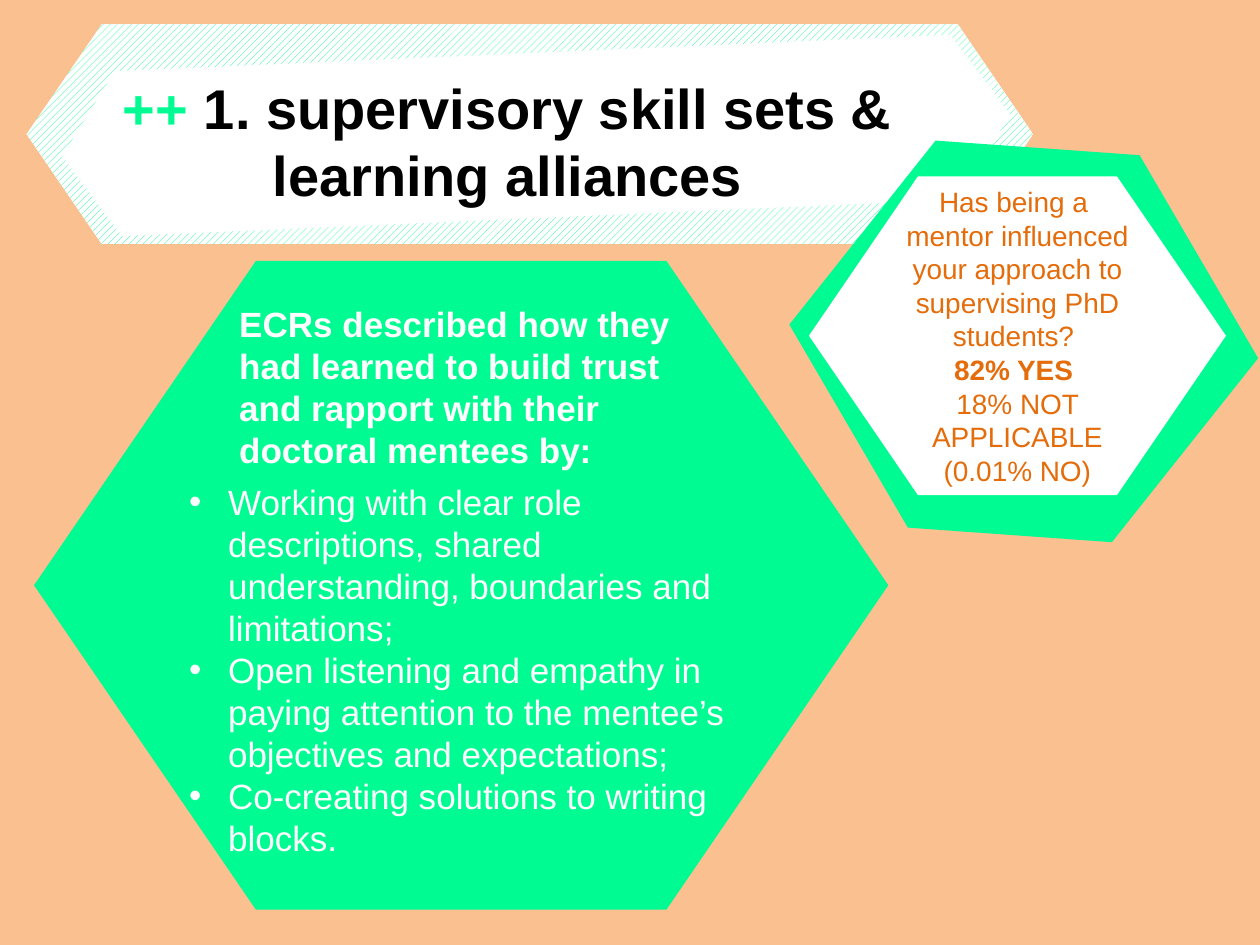
from dataclasses import dataclass

from pptx import Presentation
from pptx.dml.color import RGBColor
from pptx.enum.dml import MSO_PATTERN
from pptx.enum.shapes import MSO_SHAPE
from pptx.enum.text import MSO_ANCHOR, MSO_AUTO_SIZE, PP_ALIGN
from pptx.shapes.autoshape import Shape
from pptx.slide import Slide
from pptx.text.text import TextFrame
from pptx.util import Inches, Pt

CELL = Inches(0.1)  # the slide is a grid of 100 columns by 75 rows
COLUMNS, ROWS = 100, 75


@dataclass(frozen=True)
class Theme:
    font: str = "Arial"
    background: RGBColor = RGBColor(0xFA, 0xC0, 0x90)
    green: RGBColor = RGBColor(0x00, 0xFB, 0x92)
    white: RGBColor = RGBColor(0xFF, 0xFF, 0xFF)
    black: RGBColor = RGBColor(0x00, 0x00, 0x00)
    orange: RGBColor = RGBColor(0xE4, 0x6C, 0x0A)
    title_size: int = 32
    body_size: int = 20
    survey_size: int = 16


THEME = Theme()


@dataclass(frozen=True)
class Box:
    """A place on the grid, in columns and rows."""
    column: float
    row: float
    columns: float
    rows: float

    def lengths(self) -> tuple[int, int, int, int]:
        cells = (self.column, self.row, self.columns, self.rows)
        return tuple(round(cell * CELL) for cell in cells)


@dataclass(frozen=True)
class Hexagon:
    box: Box
    color: RGBColor
    rotation: float = 0
    hatched: bool = False


BANNER = Hexagon(Box(2.1, 1.9, 79.9, 17.5), THEME.green, hatched=True)
BANNER_CENTRE = Hexagon(Box(4.9, 4.2, 75.3, 13.1), THEME.white, 357.5)
MAIN_PANEL = Hexagon(Box(2.7, 20.7, 67.8, 51.5), THEME.green)
SURVEY_FRAME = Hexagon(Box(62.6, 11.7, 37.3, 30.8), THEME.green, 4.1)
SURVEY_PANEL = Hexagon(Box(64.2, 14, 33.1, 25.3), THEME.white)

TITLE_BOX = Box(4.7, 5.3, 71.2, 11.8)
INTRO_BOX = Box(18, 23.5, 38.9, 14.5)
LIST_BOX = Box(14, 37.6, 48.3, 31.3)

TITLE = ("++", " 1. supervisory skill sets & learning alliances")
INTRO = ("ECRs described how they had learned to build trust and rapport "
         "with their doctoral mentees by:")
PRACTICES = (
    "Working with clear role descriptions, shared understanding, "
    "boundaries and limitations;",
    "Open listening and empathy in paying attention to the mentee’s "
    "objectives and expectations;",
    "Co-creating solutions to writing blocks.",
)
SURVEY = (
    "Has being a ",
    "mentor influenced your approach to supervising PhD students? ",
    "82% YES ",
    "18% NOT APPLICABLE (0.01% NO)",
)
SURVEY_HIGHLIGHT = 2


def draw_hexagon(slide: Slide, hexagon: Hexagon) -> Shape:
    shape = slide.shapes.add_shape(MSO_SHAPE.HEXAGON, *hexagon.box.lengths())
    shape.adjustments[0] = 0.342
    shape.rotation = hexagon.rotation
    shape.shadow.inherit = False
    shape.line.fill.background()
    if hexagon.hatched:
        shape.fill.patterned()
        shape.fill.pattern = MSO_PATTERN.WIDE_UPWARD_DIAGONAL
        shape.fill.fore_color.rgb = hexagon.color
        shape.fill.back_color.rgb = THEME.white
    else:
        shape.fill.solid()
        shape.fill.fore_color.rgb = hexagon.color
    return shape


def place_text(shape: Shape, box: Box) -> TextFrame:
    """Move a text shape to its box, in front of everything drawn so far."""
    shape.left, shape.top, shape.width, shape.height = box.lengths()
    tree = shape.element.getparent()
    tree.append(shape.element)
    frame = shape.text_frame
    frame.word_wrap = True
    frame.auto_size = MSO_AUTO_SIZE.NONE
    frame.vertical_anchor = MSO_ANCHOR.TOP
    return frame


def format_text(frame: TextFrame, size: int, color: RGBColor,
                alignment: PP_ALIGN, bold: bool = False) -> None:
    for paragraph in frame.paragraphs:
        paragraph.alignment = alignment
        paragraph.space_before = Pt(0)
        for run in paragraph.runs:
            run.font.name = THEME.font
            run.font.size = Pt(size)
            run.font.bold = bold
            run.font.color.rgb = color


def write_title(slide: Slide) -> None:
    frame = place_text(slide.shapes.title, TITLE_BOX)
    paragraph = frame.paragraphs[0]
    for text in TITLE:
        paragraph.add_run().text = text
    format_text(frame, THEME.title_size, THEME.black, PP_ALIGN.CENTER, bold=True)
    paragraph.runs[0].font.color.rgb = THEME.green


def write_survey(panel: Shape) -> None:
    frame = panel.text_frame
    frame.text = "\n".join(SURVEY)
    frame.vertical_anchor = MSO_ANCHOR.MIDDLE
    format_text(frame, THEME.survey_size, THEME.orange, PP_ALIGN.CENTER)
    frame.paragraphs[SURVEY_HIGHLIGHT].runs[0].font.bold = True


def write_intro(slide: Slide) -> None:
    text_box = slide.shapes.add_textbox(*INTRO_BOX.lengths())
    frame = place_text(text_box, INTRO_BOX)
    frame.text = INTRO
    format_text(frame, THEME.body_size, THEME.white, PP_ALIGN.LEFT, bold=True)


def write_practices(slide: Slide) -> None:
    frame = place_text(slide.placeholders[1], LIST_BOX)
    frame.text = "\n".join(PRACTICES)
    format_text(frame, THEME.body_size, THEME.white, PP_ALIGN.LEFT)
    indent = Inches(0.31)
    for paragraph in frame.paragraphs:
        properties = paragraph._p.get_or_add_pPr()
        properties.set("marL", str(indent))
        properties.set("indent", str(-indent))


def main() -> None:
    presentation = Presentation()
    presentation.slide_width = COLUMNS * CELL
    presentation.slide_height = ROWS * CELL
    slide = presentation.slides.add_slide(presentation.slide_layouts[1])
    slide.background.fill.solid()
    slide.background.fill.fore_color.rgb = THEME.background

    for hexagon in (BANNER, BANNER_CENTRE):
        draw_hexagon(slide, hexagon)
    write_title(slide)
    for hexagon in (MAIN_PANEL, SURVEY_FRAME):
        draw_hexagon(slide, hexagon)
    write_survey(draw_hexagon(slide, SURVEY_PANEL))
    write_intro(slide)
    write_practices(slide)
    presentation.save("out.pptx")


if __name__ == "__main__":
    main()
